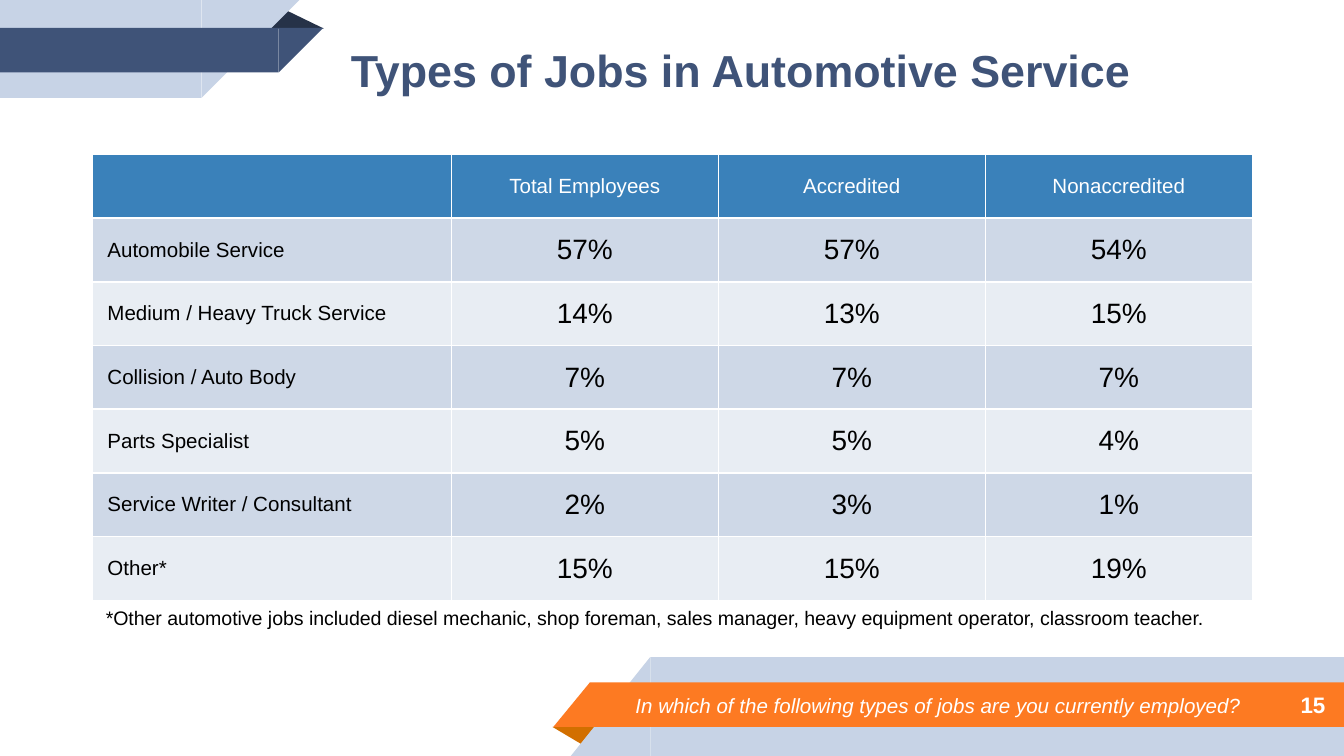
"""Build the slide on types of jobs in automotive service."""
import dataclasses
import typing

import lxml.etree
import pptx
import pptx.dml.color
import pptx.enum.shapes
import pptx.enum.text
import pptx.oxml.ns
import pptx.shapes.autoshape
import pptx.slide
import pptx.table
import pptx.text.text
import pptx.util

Cm = pptx.util.Cm
Kind = pptx.enum.shapes.MSO_SHAPE
Align = pptx.enum.text.PP_ALIGN
Anchor = pptx.enum.text.MSO_ANCHOR


@dataclasses.dataclass(frozen=True)
class Theme:
    """Hold the colours, font and type sizes of the slide."""

    font: str = "Arial"
    navy: str = "3F5378"
    dark_navy: str = "263248"
    pale_blue: str = "C7D3E6"
    orange: str = "FD7A22"
    dark_orange: str = "D26F00"
    header: str = "3A81BA"
    bands: tuple[str, str] = ("CED8E7", "E8EDF3")
    white: str = "FFFFFF"
    black: str = "000000"
    title_size: float = 24
    value_size: float = 15
    number_size: float = 12
    label_size: float = 11
    note_size: float = 10.5


class Box(typing.NamedTuple):
    """Give a place and size in centimetres."""

    left: float
    top: float
    width: float
    height: float

    def lengths(self) -> list[pptx.util.Length]:
        """Return the four values as lengths."""
        return [Cm(value) for value in self]


class RibbonPart(typing.NamedTuple):
    """Describe one piece of a corner ribbon."""

    kind: Kind
    box: Box
    colour: str
    flip: str = ""
    rotation: float = 0


class JobRow(typing.NamedTuple):
    """Give one job type and its shares in percent."""

    job: str
    shares: tuple[int, int, int]


THEME = Theme()
TABLE_BOX = Box(1.75, 2.92, 21.92, 8.43)
JOB_COLUMN = 6.78
RIBBONS = [
    RibbonPart(Kind.ISOSCELES_TRIANGLE, Box(10.44, 13.74, 0.89, 0.36), THEME.dark_orange, rotation=180),
    RibbonPart(Kind.RECTANGLE, Box(12.29, 12.42, 13.11, 1.87), THEME.pale_blue),
    RibbonPart(Kind.RIGHT_TRIANGLE, Box(10.79, 12.42, 1.5, 1.87), THEME.pale_blue, "flipH"),
    RibbonPart(Kind.RECTANGLE, Box(11.15, 12.9, 14.25, 0.84), THEME.orange),
    RibbonPart(Kind.RIGHT_TRIANGLE, Box(10.46, 12.9, 0.69, 0.84), THEME.orange, "flipH"),
    RibbonPart(Kind.ISOSCELES_TRIANGLE, Box(5.03, 0.18, 1.09, 0.36), THEME.dark_navy),
    RibbonPart(Kind.RECTANGLE, Box(0, 0, 3.81, 1.85), THEME.pale_blue),
    RibbonPart(Kind.RIGHT_TRIANGLE, Box(3.81, 0, 1.85, 1.85), THEME.pale_blue, "flipV"),
    RibbonPart(Kind.RECTANGLE, Box(0, 0.53, 5.27, 0.84), THEME.navy),
    RibbonPart(Kind.RIGHT_TRIANGLE, Box(5.27, 0.53, 0.84, 0.84), THEME.navy, "flipV"),
]
HEADINGS = ["", "Total Employees", "Accredited", "Nonaccredited"]
JOBS = [
    JobRow("Automobile Service", (57, 57, 54)),
    JobRow("Medium / Heavy Truck Service", (14, 13, 15)),
    JobRow("Collision / Auto Body", (7, 7, 7)),
    JobRow("Parts Specialist", (5, 5, 4)),
    JobRow("Service Writer / Consultant", (2, 3, 1)),
    JobRow("Other*", (15, 15, 19)),
]


def rgb(colour: str) -> pptx.dml.color.RGBColor:
    """Turn a hex string into a colour."""
    return pptx.dml.color.RGBColor.from_string(colour)


def write_text(
    frame: pptx.text.text.TextFrame,
    text: str,
    *,
    size: float,
    colour: str,
    bold: bool = False,
    italic: bool = False,
    align: Align = Align.LEFT,
) -> None:
    """Write one formatted paragraph into a text frame."""
    paragraph = frame.paragraphs[0]
    paragraph.alignment = align
    run = paragraph.add_run()
    run.text = text
    font = run.font
    font.name, font.size = THEME.font, pptx.util.Pt(size)
    font.bold, font.italic = bold, italic
    font.color.rgb = rgb(colour)


def place_text(
    shape: pptx.shapes.autoshape.Shape,
    box: Box,
    text: str,
    *,
    anchor: Anchor = Anchor.MIDDLE,
    vertical_inset: float = 0.25,
    **text_format: typing.Any,
) -> None:
    """Position a text shape and fill it with text."""
    shape.left, shape.top, shape.width, shape.height = box.lengths()
    frame = shape.text_frame
    frame.word_wrap = True
    frame.auto_size = pptx.enum.text.MSO_AUTO_SIZE.NONE
    frame.vertical_anchor = anchor
    frame.margin_left = frame.margin_right = Cm(0.25)
    frame.margin_top = frame.margin_bottom = Cm(vertical_inset)
    write_text(frame, text, **text_format)


def draw_ribbon_part(slide: pptx.slide.Slide, part: RibbonPart) -> None:
    """Draw one flat piece of a ribbon."""
    shape = slide.shapes.add_shape(part.kind, *part.box.lengths())
    shape.shadow.inherit = False
    shape.fill.solid()
    shape.fill.fore_color.rgb = rgb(part.colour)
    shape.line.fill.background()
    shape.rotation = part.rotation
    if part.kind == Kind.ISOSCELES_TRIANGLE:
        shape.adjustments[0] = 0.32
    if part.flip:
        shape.element.spPr.xfrm.set(part.flip, "1")


def style_cell(cell: pptx.table._Cell, fill: str) -> None:
    """Give a cell its fill, white borders and anchor."""
    qn = pptx.oxml.ns.qn
    cell.vertical_anchor = Anchor.MIDDLE
    properties = cell._tc.get_or_add_tcPr()
    for side in "LRTB":
        width = str(pptx.util.Pt(1))
        line = lxml.etree.SubElement(properties, qn(f"a:ln{side}"), w=width)
        solid = lxml.etree.SubElement(line, qn("a:solidFill"))
        lxml.etree.SubElement(solid, qn("a:srgbClr"), val=THEME.white)
    cell.fill.solid()
    cell.fill.fore_color.rgb = rgb(fill)


def draw_table(slide: pptx.slide.Slide) -> None:
    """Draw the table of job shares."""
    rows = [HEADINGS] + [[job, *(f"{share}%" for share in shares)] for job, shares in JOBS]
    table = slide.shapes.add_table(len(rows), len(HEADINGS), *TABLE_BOX.lengths()).table
    table.first_row = table.horz_banding = False
    share_column = (TABLE_BOX.width - JOB_COLUMN) / (len(HEADINGS) - 1)
    for index, column in enumerate(table.columns):
        column.width = Cm(share_column if index else JOB_COLUMN)
    for row_index, texts in enumerate(rows):
        fill = THEME.bands[(row_index - 1) % 2] if row_index else THEME.header
        colour = THEME.black if row_index else THEME.white
        for column_index, text in enumerate(texts):
            cell = table.cell(row_index, column_index)
            style_cell(cell, fill)
            if column_index == 0:
                cell.margin_left = Cm(0.28)
            size = THEME.value_size if row_index and column_index else THEME.label_size
            align = Align.CENTER if column_index else Align.LEFT
            if text:
                write_text(cell.text_frame, text, size=size, colour=colour, align=align)


def main() -> None:
    """Build and save the presentation."""
    presentation = pptx.Presentation()
    presentation.slide_width, presentation.slide_height = Cm(25.4), Cm(14.29)
    slide = presentation.slides.add_slide(presentation.slide_layouts[5])
    for part in RIBBONS:
        draw_ribbon_part(slide, part)
    place_text(slide.shapes.title, Box(6.38, 0.25, 17.75, 2.13), "Types of Jobs in Automotive Service",
               size=THEME.title_size, colour=THEME.navy, bold=True)
    draw_table(slide)
    question, number, note = (slide.shapes.add_textbox(0, 0, 0, 0) for _ in range(3))
    place_text(question, Box(11.76, 12.88, 12.37, 0.89),
               "In which of the following types of jobs are you currently employed?",
               size=THEME.label_size, colour=THEME.white, italic=True)
    place_text(number, Box(21.16, 12.88, 4.14, 0.89), "15",
               size=THEME.number_size, colour=THEME.white, bold=True, align=Align.RIGHT)
    place_text(note, Box(1.75, 11.33, 21.92, 0.71),
               "*Other automotive jobs included diesel mechanic, shop foreman, sales manager, "
               "heavy equipment operator, classroom teacher.",
               anchor=Anchor.TOP, vertical_inset=0.13, size=THEME.note_size, colour=THEME.black)
    presentation.save("out.pptx")


if __name__ == "__main__":
    main()
